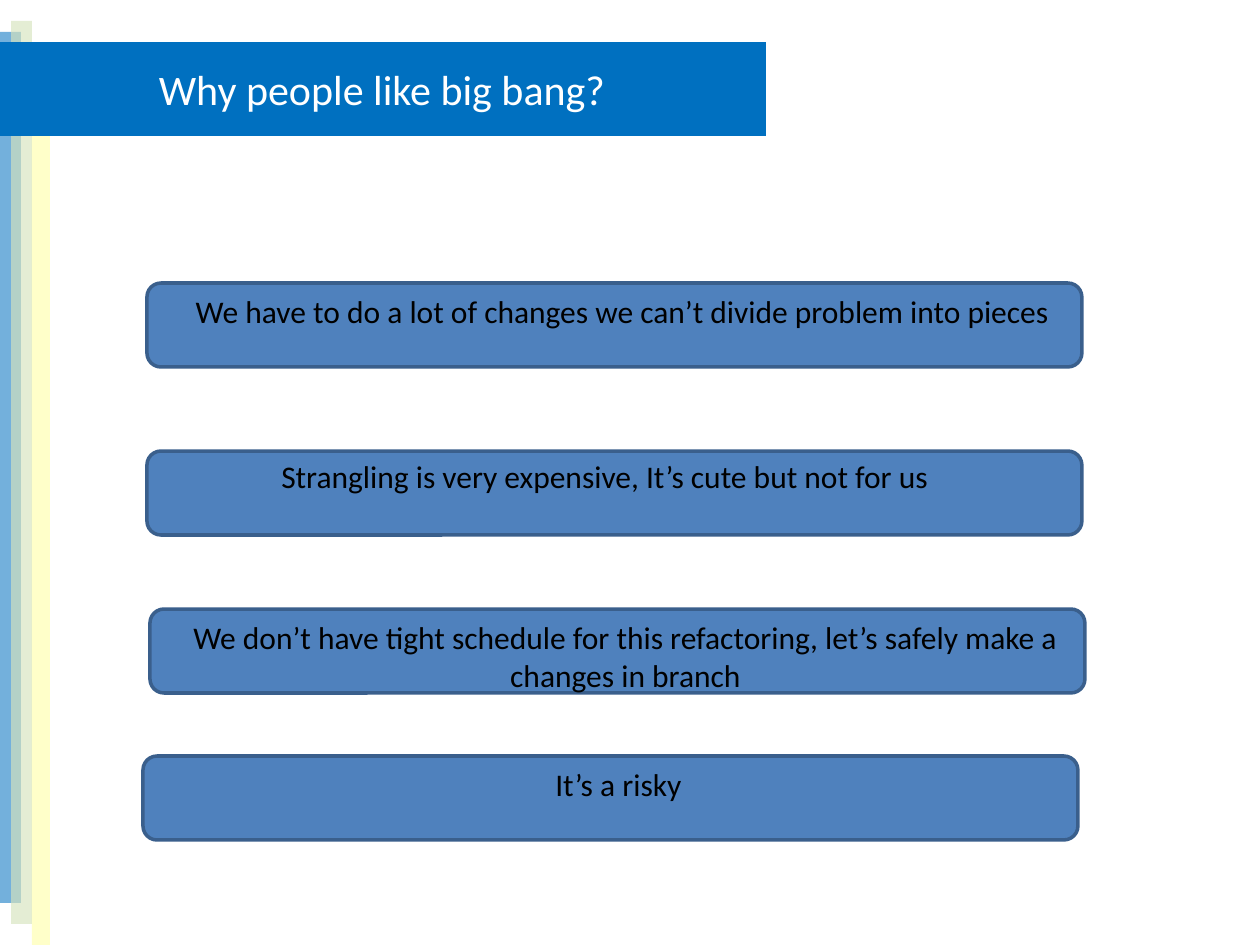
"""Build the slide listing why people like a big bang change."""
from lxml import etree
from pptx import Presentation
from pptx.dml.color import RGBColor
from pptx.enum.shapes import MSO_SHAPE
from pptx.enum.text import MSO_ANCHOR, MSO_AUTO_SIZE, PP_ALIGN
from pptx.oxml.ns import qn
from pptx.util import Emu, Pt

RECTANGLE = MSO_SHAPE.RECTANGLE
ROUNDED = MSO_SHAPE.ROUNDED_RECTANGLE
MIDDLE, TOP = MSO_ANCHOR.MIDDLE, MSO_ANCHOR.TOP
CENTER = PP_ALIGN.CENTER
GROW, FIXED = MSO_AUTO_SIZE.SHAPE_TO_FIT_TEXT, MSO_AUTO_SIZE.NONE

BLUE = RGBColor(0x00, 0x70, 0xC0)
GREEN = RGBColor(0xD7, 0xE4, 0xBD)
YELLOW = RGBColor(0xFF, 0xFF, 0x00)
PANEL = RGBColor(0x4F, 0x81, 0xBD)
PANEL_EDGE = RGBColor(0x3A, 0x5F, 0x8C)
WHITE = RGBColor(0xFF, 0xFF, 0xFF)
BLACK = RGBColor(0x00, 0x00, 0x00)

FONT = "Calibri"
PX_PER_INCH = 126
SLIDE_SIZE = (1260, 945)
TITLE = "Why people like big bang?"
TITLE_BOX = (-2, 42, 768, 94)
STRIPES = [
    ((0, 32, 21, 871), BLUE, 55),
    ((11, 21, 21, 903), GREEN, 65),
    ((32, 42, 18, 903), YELLOW, 21),
]
PANEL_SIZE = (935, 84)
TEXT_WIDTH = 945
REASONS = [
    ("We have to do a lot of changes we can’t divide problem into pieces", (147, 283), (3, 3), 50),
    ("Strangling is very expensive, It’s cute but not for us ", (147, 451), (-11, 0), 50),
    ("We don’t have tight schedule for this refactoring, let’s safely make a changes in branch",
     (150, 609), (3, 3), 89),
    ("It’s a risky", (143, 756), (3, 3), 50),
]


def px(*lengths):
    return [Emu(round(length * 914400 / PX_PER_INCH)) for length in lengths]


def write(frame, text, size, color, anchor=TOP, fit=FIXED):
    frame.word_wrap = True
    frame.auto_size = fit
    frame.vertical_anchor = anchor
    paragraph = frame.paragraphs[0]
    paragraph.alignment = CENTER
    run = paragraph.add_run()
    run.text = text
    run.font.name = FONT
    run.font.size = Pt(size)
    run.font.color.rgb = color


def add_block(shapes, preset, box, color):
    block = shapes.add_shape(preset, *px(*box))
    block.shadow.inherit = False
    block.fill.solid()
    block.fill.fore_color.rgb = color
    return block


def add_stripe(slide, box, color, opacity):
    stripe = add_block(slide.shapes, RECTANGLE, box, color)
    stripe.line.fill.background()
    tint = stripe.fill._xPr.find(qn("a:solidFill"))[0]
    etree.SubElement(tint, qn("a:alpha"), val=str(opacity * 1000))
    slide.shapes.title._element.addprevious(stripe._element)


def add_reason(slide, text, corner, offset, height):
    group = slide.shapes.add_group_shape()
    panel = add_block(group.shapes, ROUNDED, corner + PANEL_SIZE, PANEL)
    panel.line.color.rgb = PANEL_EDGE
    panel.line.width = Pt(2)
    left, top = (start + shift for start, shift in zip(corner, offset))
    label = group.shapes.add_textbox(*px(left, top, TEXT_WIDTH, height))
    write(label.text_frame, text, 18, BLACK, fit=GROW)


def main():
    deck = Presentation()
    deck.slide_width, deck.slide_height = px(*SLIDE_SIZE)
    slide = deck.slides.add_slide(deck.slide_layouts[5])
    title = slide.shapes.title
    title.left, title.top, title.width, title.height = px(*TITLE_BOX)
    title.fill.solid()
    title.fill.fore_color.rgb = BLUE
    write(title.text_frame, TITLE, 24, WHITE, anchor=MIDDLE)
    for stripe in STRIPES:
        add_stripe(slide, *stripe)
    for reason in REASONS:
        add_reason(slide, *reason)
    deck.save("out.pptx")


if __name__ == "__main__":
    main()
